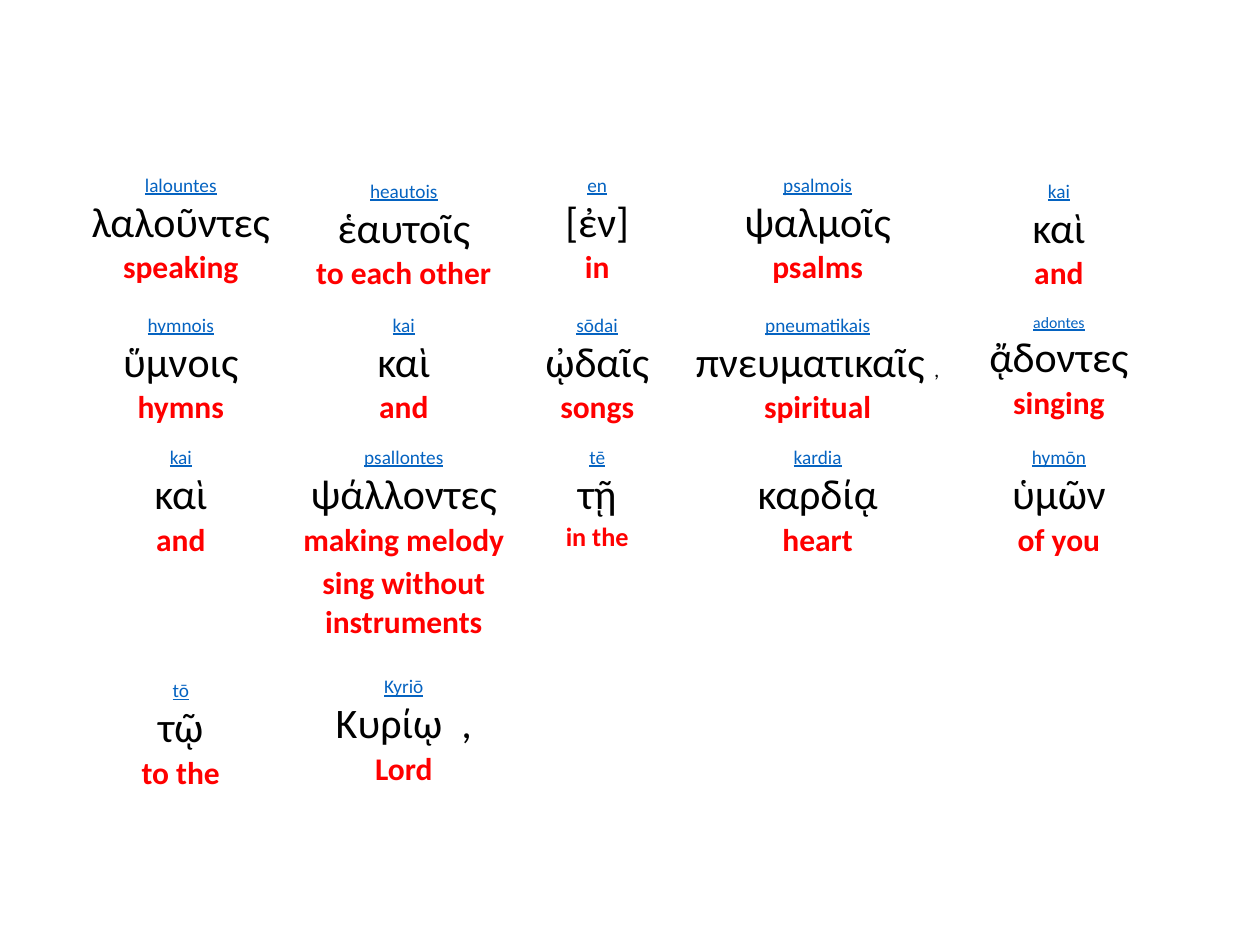
from copy import deepcopy

from lxml import etree
from pptx import Presentation
from pptx import util as u
from pptx.dml.color import RGBColor
from pptx.enum import text
from pptx.oxml import ns

# Each word: transliteration, Greek, gloss
VERSE = [
    [("lalountes", "λαλοῦντες", "speaking"), ("heautois", "ἑαυτοῖς", "to each other"),
     ("en", "[ἐν]", "in"), ("psalmois", "ψαλμοῖς", "psalms"), ("kai", "καὶ", "and")],
    [("hymnois", "ὕμνοις", "hymns"), ("kai", "καὶ", "and"), ("sōdai", "ᾠδαῖς", "songs"),
     ("pneumatikais", "πνευματικαῖς", "spiritual"), ("adontes", "ᾄδοντες", "singing")],
    [("kai", "καὶ", "and"), ("psallontes", "ψάλλοντες", "making melody"),
     ("tē", "τῇ", "in the"), ("kardia", "καρδίᾳ", "heart"), ("hymōn", "ὑμῶν", "of you")],
    [("tō", "τῷ", "to the"), ("Kyriō", "Κυρίῳ  ,", "Lord")],
]
COLUMN_WIDTHS = [1.71, 1.83, 1.24, 2.26, 1.57]
ROW_HEIGHTS = [1.11, 1.05, 1.82, 0.96]

# Exceptions to the common layout
SMALLER = {"adontes": 9, "in the": 15}
AFTER_GREEK = {"πνευματικαῖς": "  ,"}
SECOND_GLOSS = {"making melody": "sing without instruments"}
MIDDLE = {(0, 1): 0.12, (0, 4): 0.12, (3, 0): 0}  # cell: bottom inset
SPACED = {(2, 1), (3, 1)}


def colour(value):
    return RGBColor.from_string(value)


class Interlinear:
    FONT = "Calibri"
    LINK, INK, GLOSS, RULE = "0563C1", "000000", "FF0000", "FFFFFF"

    def __init__(self, slide):
        self.slide = slide

    def run(self, paragraph, words, size, ink, bold=False, underline=False):
        run = paragraph.add_run()
        run.text = words
        font = run.font
        font.name, font.size = self.FONT, u.Pt(SMALLER.get(words, size))
        font.bold, font.underline = bold, underline
        font.color.rgb = colour(ink)
        return run

    def line_break(self, paragraph, run):
        """Break the line, at the text size of the run before it."""
        paragraph.add_line_break()
        paragraph._p[-1].append(deepcopy(run.font._element))

    def borders(self, cell, bottom):
        properties = cell._tc.get_or_add_tcPr()
        for side, width in (("L", 1), ("R", 1), ("T", 1), ("B", bottom)):
            line = etree.SubElement(properties, ns.qn(f"a:ln{side}"), w=str(u.Pt(width)))
            fill = etree.SubElement(line, ns.qn("a:solidFill"))
            etree.SubElement(fill, ns.qn("a:srgbClr"), val=self.RULE)

    def word(self, cell, transliteration, greek, gloss, spaced):
        paragraph = cell.text_frame.paragraphs[0]
        paragraph.alignment = text.PP_ALIGN.CENTER
        if spaced:
            paragraph.space_before = paragraph.space_after = u.Pt(3)
        run = self.run(paragraph, transliteration, 11, self.LINK, underline=True)
        self.line_break(paragraph, run)
        run = self.run(paragraph, greek, 24, self.INK)
        if greek in AFTER_GREEK:
            self.run(paragraph, AFTER_GREEK[greek], 12, self.INK)
        self.line_break(paragraph, run)
        self.run(paragraph, gloss, 18, self.GLOSS, bold=True)
        if gloss in SECOND_GLOSS:
            paragraph = cell.text_frame.add_paragraph()
            paragraph.alignment = text.PP_ALIGN.CENTER
            self.run(paragraph, SECOND_GLOSS[gloss], 18, self.GLOSS, bold=True)

    def table(self, left, top, widths, heights, verse):
        table = self.slide.shapes.add_table(
            len(heights), len(widths), u.Inches(left), u.Inches(top),
            u.Inches(sum(widths)), u.Inches(sum(heights))).table
        table.first_row = table.horz_banding = False
        for column, width in zip(table.columns, widths):
            column.width = u.Inches(width)
        for r, height in enumerate(heights):
            table.rows[r].height = u.Inches(height)
            for c in range(len(widths)):
                cell = table.cell(r, c)
                self.borders(cell, bottom=3 if r == 0 else 1)
                cell.fill.background()
                cell.margin_left = cell.margin_right = u.Inches(0.06)
                cell.margin_top = cell.margin_bottom = 0
                if (r, c) in MIDDLE:
                    cell.vertical_anchor = text.MSO_ANCHOR.MIDDLE
                    cell.margin_bottom = u.Inches(MIDDLE[r, c])
                if c < len(verse[r]):
                    self.word(cell, *verse[r][c], spaced=(r, c) in SPACED)


def main():
    deck = Presentation()
    deck.slide_width, deck.slide_height = u.Inches(10), u.Inches(7.5)
    page = Interlinear(deck.slides.add_slide(deck.slide_layouts[6]))

    # Verse, word by word
    page.table(0.58, 1.38, COLUMN_WIDTHS, ROW_HEIGHTS, VERSE)
    deck.save("out.pptx")


if __name__ == "__main__":
    main()
